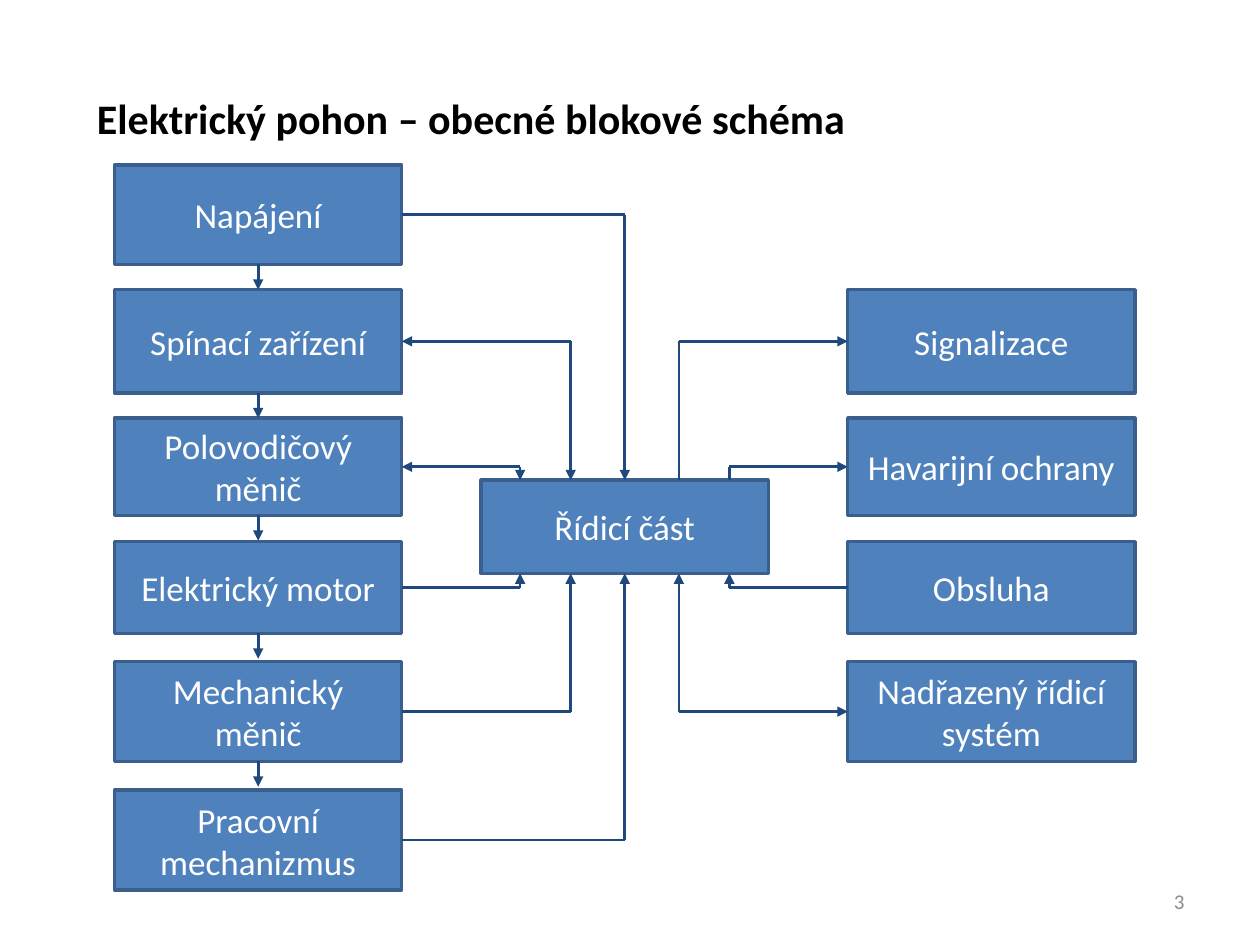
from lxml import etree
from pptx import Presentation
from pptx.dml.color import RGBColor
from pptx.enum.shapes import MSO_CONNECTOR, MSO_SHAPE
from pptx.enum.text import MSO_ANCHOR, MSO_AUTO_SIZE, PP_ALIGN
from pptx.oxml.ns import qn
from pptx.util import Cm, Pt

STRAIGHT, RECTANGLE = MSO_CONNECTOR.STRAIGHT, MSO_SHAPE.RECTANGLE
TOP, MIDDLE = MSO_ANCHOR.TOP, MSO_ANCHOR.MIDDLE
LEFT, CENTER, RIGHT = PP_ALIGN.LEFT, PP_ALIGN.CENTER, PP_ALIGN.RIGHT

FONT = "Calibri"
BLACK = RGBColor(0x00, 0x00, 0x00)
WHITE = RGBColor(0xFF, 0xFF, 0xFF)
GREY = RGBColor(0x8C, 0x8C, 0x8C)
BLOCK_BLUE = RGBColor(0x4F, 0x81, 0xBD)
BORDER_BLUE = RGBColor(0x3A, 0x5F, 0x8C)
ARROW_BLUE = RGBColor(0x1F, 0x49, 0x7D)

TITLE = "Elektrický pohon – obecné blokové schéma"
PAGE_NUMBER = "3"
CONTROL = "Řídicí část"
DRIVE_CHAIN = ["Napájení", "Spínací zařízení", "Polovodičový měnič",
               "Elektrický motor", "Mechanický měnič", "Pracovní mechanizmus"]
SURROUNDINGS = {1: "Signalizace", 2: "Havarijní ochrany",
                3: "Obsluha", 4: "Nadřazený řídicí systém"}

# (row, lane, arrow at the control block, arrow at the outer block)
DRIVE_LINKS = [(0, 2, True, False), (1, 1, True, True), (2, 0, True, True),
               (3, 0, True, False), (4, 1, True, False), (5, 2, True, False)]
SURROUNDING_LINKS = [(1, 3, False, True), (2, 4, False, True),
                     (3, 4, True, False), (4, 3, True, True)]

# Lengths in cm
ROWS = [(3.33, 2.0), (5.84, 2.08), (8.43, 1.96),
        (10.92, 1.85), (13.34, 2.01), (15.93, 2.01)]  # top, height
BLOCK_WIDTH = 5.79
DRIVE_X, CONTROL_X, SURROUNDINGS_X = 2.31, 9.7, 17.09
CONTROL_TOP, CONTROL_HEIGHT = 9.68, 1.88
CONTROL_MIDDLE = CONTROL_X + BLOCK_WIDTH / 2
LANES = [CONTROL_MIDDLE + offset for offset in (-2.11, -1.09, 0, 1.09, 2.11)]
STEP_ARROW = 0.51


def write(frame, text, size, color, align, anchor, bold=False):
    frame.word_wrap = True
    frame.auto_size = MSO_AUTO_SIZE.NONE
    frame.vertical_anchor = anchor
    paragraph = frame.paragraphs[0]
    paragraph.alignment = align
    run = paragraph.add_run()
    run.text = text
    run.font.name, run.font.size, run.font.bold = FONT, Pt(size), bold
    run.font.color.rgb = color


def place(shape, left, top, width, height):
    shape.left, shape.top = Cm(left), Cm(top)
    shape.width, shape.height = Cm(width), Cm(height)


def add_block(shapes, text, left, top, height):
    block = shapes.add_shape(RECTANGLE, Cm(left), Cm(top), Cm(BLOCK_WIDTH), Cm(height))
    block.shadow.inherit = False
    block.fill.solid()
    block.fill.fore_color.rgb = BLOCK_BLUE
    block.line.color.rgb = BORDER_BLUE
    block.line.width = Pt(2)
    write(block.text_frame, text, 20, WHITE, CENTER, MIDDLE)


def add_line(shapes, start, end, arrow):
    """Draw a line between two (x, y) points, with an optional arrowhead at the end."""
    line = shapes.add_connector(STRAIGHT, *(Cm(value) for value in start + end))
    line.line.color.rgb = ARROW_BLUE
    line.line.width = Pt(1.5)
    if arrow:
        etree.SubElement(line.line._get_or_add_ln(), qn("a:tailEnd"), type="triangle")
    etree.SubElement(line._element.spPr, qn("a:effectLst"))


def add_links(shapes, links, block_edge):
    """Join outer blocks to the control block with right-angled links."""
    for row, lane, to_control, to_block in links:
        top, height = ROWS[row]
        y = top + height / 2
        corner = (LANES[lane], y)
        above = y < CONTROL_TOP
        control_edge = CONTROL_TOP if above else CONTROL_TOP + CONTROL_HEIGHT
        add_line(shapes, corner, (LANES[lane], control_edge), to_control)
        add_line(shapes, corner, (block_edge, y), to_block)


def main():
    presentation = Presentation()
    presentation.slide_width, presentation.slide_height = Cm(25.4), Cm(19.05)
    slide = presentation.slides.add_slide(presentation.slide_layouts[5])
    shapes = slide.shapes

    place(shapes.title, 1.7, 1.73, 22.4, 1.27)
    write(shapes.title.text_frame, TITLE, 24, BLACK, LEFT, TOP, bold=True)

    page_number = shapes.add_textbox(Cm(18.21), Cm(17.65), Cm(5.92), Cm(1.02))
    write(page_number.text_frame, PAGE_NUMBER, 12, GREY, RIGHT, MIDDLE)

    for text, (top, height) in zip(DRIVE_CHAIN, ROWS):
        add_block(shapes, text, DRIVE_X, top, height)
    for row, text in SURROUNDINGS.items():
        add_block(shapes, text, SURROUNDINGS_X, *ROWS[row])
    add_block(shapes, CONTROL, CONTROL_X, CONTROL_TOP, CONTROL_HEIGHT)

    chain_x = DRIVE_X + BLOCK_WIDTH / 2
    for top, height in ROWS[:-1]:
        bottom = top + height
        add_line(shapes, (chain_x, bottom), (chain_x, bottom + STEP_ARROW), True)
    add_links(shapes, DRIVE_LINKS, DRIVE_X + BLOCK_WIDTH)
    add_links(shapes, SURROUNDING_LINKS, SURROUNDINGS_X)

    presentation.save("out.pptx")


if __name__ == "__main__":
    main()
